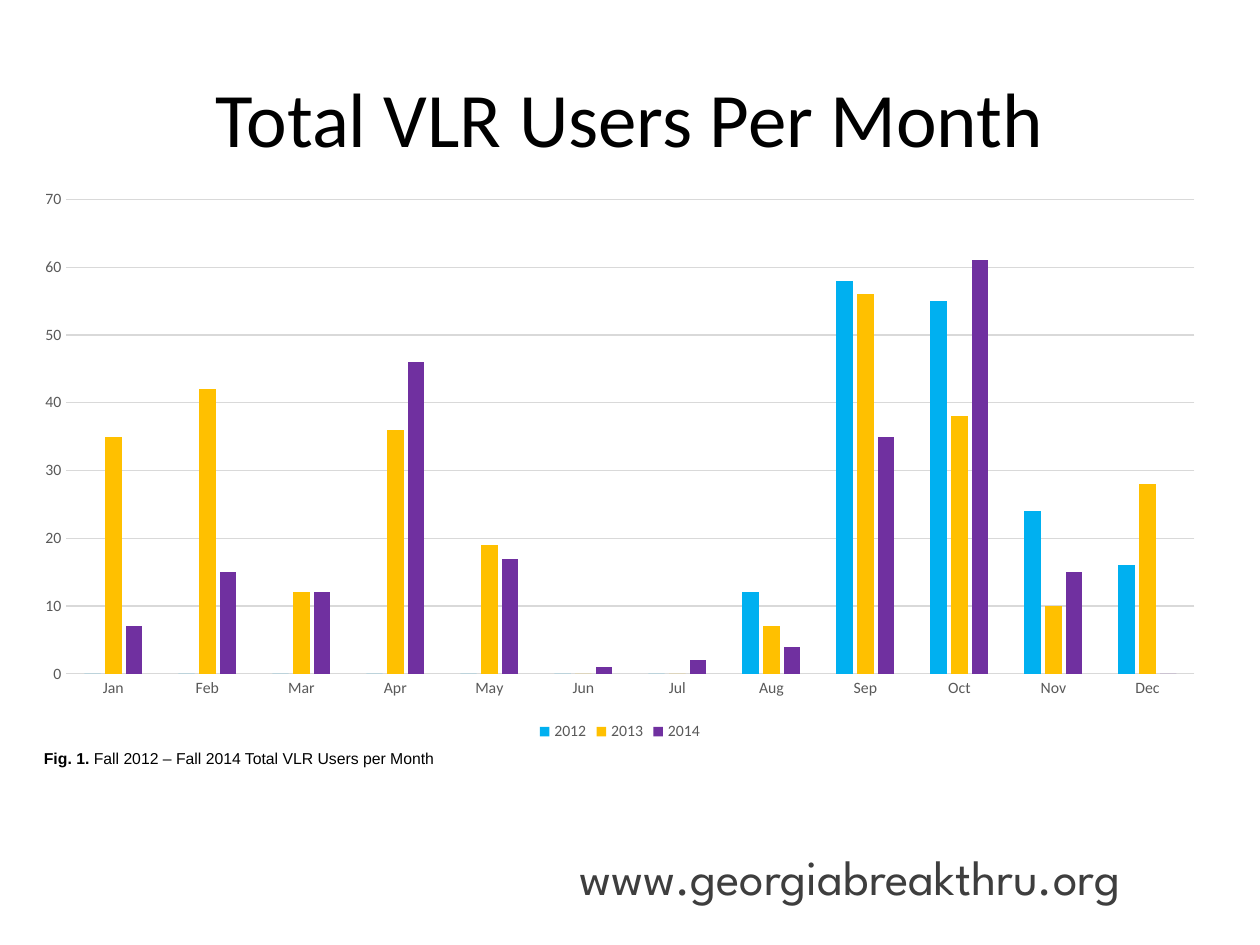
from pptx import Presentation
from pptx.chart.data import CategoryChartData
from pptx.dml.color import RGBColor
from pptx.enum.chart import XL_CHART_TYPE, XL_LEGEND_POSITION, XL_TICK_MARK
from pptx.enum.text import MSO_ANCHOR, PP_ALIGN
from pptx.util import Inches, Pt

BLACK, GREY, GRID = "000000", "595959", "D9D9D9"
MONTHS = ["Jan", "Feb", "Mar", "Apr", "May", "Jun",
          "Jul", "Aug", "Sep", "Oct", "Nov", "Dec"]
USERS = {
    "2012": ("00B0F0", [0, 0, 0, 0, 0, 0, 0, 12, 58, 55, 24, 16]),
    "2013": ("FFC000", [35, 42, 12, 36, 19, 0, 0, 7, 56, 38, 10, 28]),
    "2014": ("7030A0", [7, 15, 12, 46, 17, 1, 2, 4, 35, 61, 15, 0]),
}


def color(value):
    return RGBColor.from_string(value)


def set_font(font, fill, **formats):
    for name, value in formats.items():
        setattr(font, name, value)
    font.color.rgb = color(fill)


def set_line(line):
    line.color.rgb = color(GRID)
    line.width = Pt(0.75)


def add_title(slide, box, text):
    title = slide.shapes.title
    for name, value in zip(("left", "top", "width", "height"), box):
        setattr(title, name, Inches(value))
    frame = title.text_frame
    frame.text = text
    frame.vertical_anchor = MSO_ANCHOR.MIDDLE
    paragraph = frame.paragraphs[0]
    paragraph.alignment = PP_ALIGN.CENTER
    set_font(paragraph.runs[0].font, BLACK, name="Calibri", size=Pt(44))


def add_text(slide, box, runs, fill, **formats):
    """Add one line of text from (text, bold) runs."""
    frame = slide.shapes.add_textbox(*map(Inches, box)).text_frame
    frame.word_wrap = True
    for text, bold in runs:
        run = frame.paragraphs[0].add_run()
        run.text = text
        set_font(run.font, fill, bold=bold, **formats)


def add_users_chart(slide, box):
    data = CategoryChartData(number_format="General")
    data.categories = MONTHS
    for year, (_, values) in USERS.items():
        data.add_series(year, values)
    chart = slide.shapes.add_chart(
        XL_CHART_TYPE.COLUMN_CLUSTERED, *map(Inches, box), data).chart
    chart.has_title = False
    set_font(chart.font, BLACK, name="Calibri", size=Pt(10))

    # Columns
    plot = chart.plots[0]
    plot.gap_width, plot.overlap, plot.vary_by_categories = 219, -27, False
    for series in plot.series:
        series.format.fill.solid()
        series.format.fill.fore_color.rgb = color(USERS[series.name][0])

    # Axes
    for axis in (chart.category_axis, chart.value_axis):
        axis.major_tick_mark = axis.minor_tick_mark = XL_TICK_MARK.NONE
        set_font(axis.tick_labels.font, GREY, name="Calibri", size=Pt(9))
    set_line(chart.category_axis.format.line)
    value_axis = chart.value_axis
    value_axis.format.line.fill.background()
    value_axis.minimum_scale, value_axis.maximum_scale = 0, 70
    value_axis.major_unit = 10
    set_line(value_axis.major_gridlines.format.line)

    # Legend
    chart.has_legend = True
    chart.legend.position = XL_LEGEND_POSITION.BOTTOM
    chart.legend.include_in_layout = False
    set_font(chart.legend.font, GREY, name="Calibri", size=Pt(9))


def main():
    presentation = Presentation()
    presentation.slide_width = Inches(10)
    presentation.slide_height = Inches(7.5)
    slide = presentation.slides.add_slide(presentation.slide_layouts[5])

    add_title(slide, (0.5, 0.3, 9, 1.25), "Total VLR Users Per Month")
    # Web address
    add_text(slide, (4.5, 6.67, 5.33, 0.4),
             [("www.georgiabreakthru.org", False)],
             "3E3E3E", name="League Spartan", size=Pt(28))
    # Caption
    add_text(slide, (0.25, 5.89, 9.75, 0.56),
             [("Fig. 1.", True),
              (" Fall 2012 – Fall 2014 Total VLR Users per Month", False)],
             BLACK, name="Arial", size=Pt(9))
    add_users_chart(slide, (0.17, 1.42, 9.5, 4.5))

    presentation.save("out.pptx")


if __name__ == "__main__":
    main()
